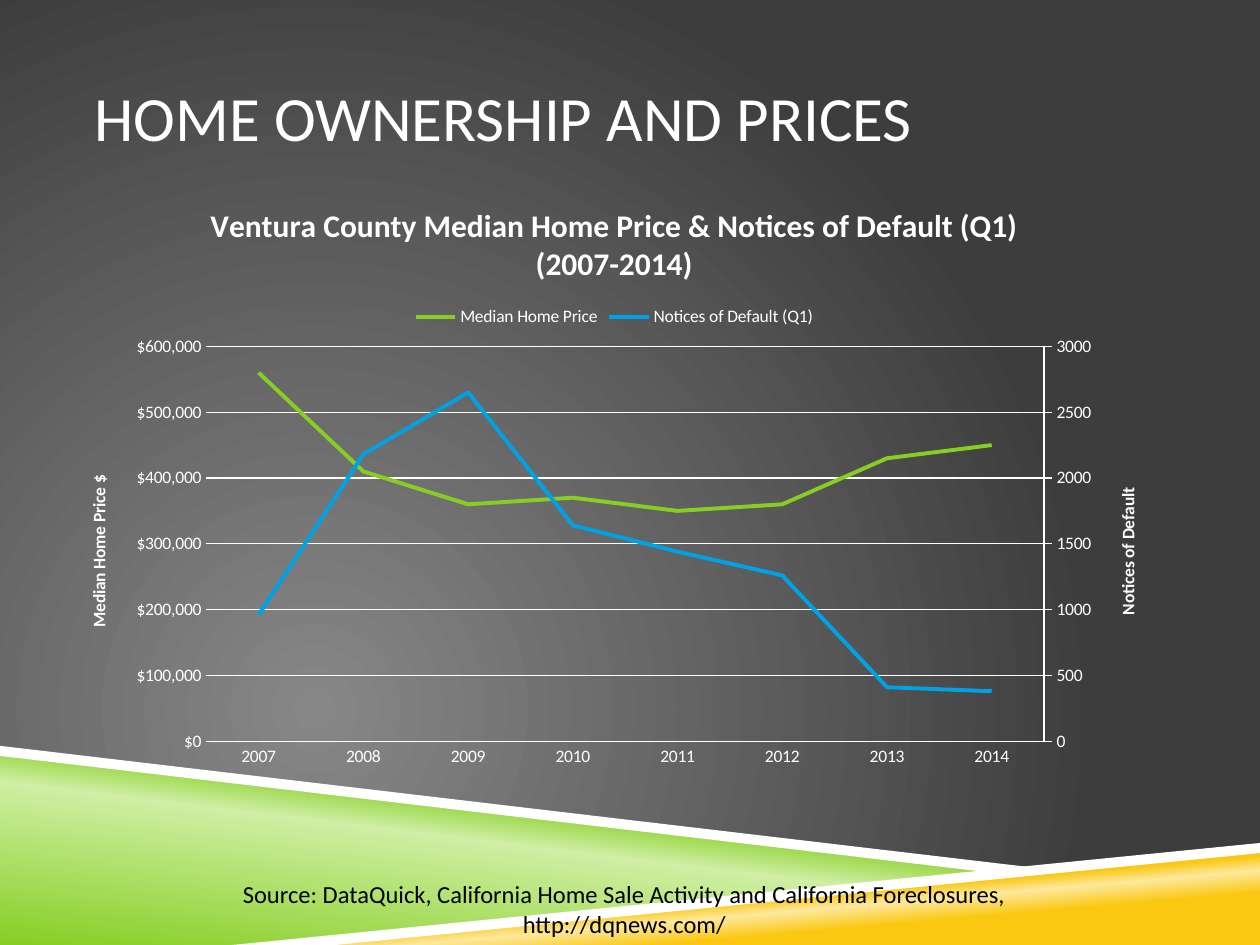
"""Build a slide on home prices and default notices in Ventura County."""
from copy import deepcopy

from pptx import Presentation
from pptx.chart.axis import CategoryAxis, ValueAxis
from pptx.chart.data import CategoryChartData
from pptx.dml.color import RGBColor
from pptx.enum.chart import XL_CHART_TYPE, XL_LEGEND_POSITION, XL_TICK_MARK
from pptx.enum.text import MSO_ANCHOR, PP_ALIGN
from pptx.oxml import parse_xml
from pptx.oxml.ns import nsdecls, qn
from pptx.util import Inches, Pt

LINE = XL_CHART_TYPE.LINE
TOP = XL_LEGEND_POSITION.TOP
OUT, NONE = XL_TICK_MARK.OUTSIDE, XL_TICK_MARK.NONE
LEFT, MID = PP_ALIGN.LEFT, PP_ALIGN.CENTER
THEME = {
    "font": "Calibri", "white": "FFFFFF", "black": "000000",
    "green": "86CE24", "pale": "CFEFA4", "gold": "FAC810", "cream": "FDE99F",
    "blue": "00A2E6", "gray": "878787", "dark": "3D3D3D",
    "head": 36, "name": 18, "note": 14, "small": 10,
}
HUE = {key: RGBColor.from_string(val) for key, val in THEME.items()
       if isinstance(val, str) and key != "font"}


def say(frame, text, size="small", hue="white", bold=False, align=MID):
    frame.text = text
    for para in frame.paragraphs:
        para.alignment = align
        for run in para.runs:
            font = run.font
            font.name, font.size, font.bold = THEME["font"], Pt(THEME[size]), bold
            font.color.rgb = HUE[hue]


def blend(node, stops, way):
    marks = "".join(f'<a:gs pos="{pos * 1000}"><a:srgbClr val="{THEME[hue]}"/></a:gs>'
                    for pos, hue in stops)
    old = next(node.iter(qn("a:solidFill")))
    old.getparent().replace(old, parse_xml(
        f'<a:gradFill {nsdecls("a")} rotWithShape="1"><a:gsLst>{marks}</a:gsLst>{way}</a:gradFill>'))


deck = Presentation()
deck.slide_width, deck.slide_height = Inches(10), Inches(7.5)
COL, ROW = deck.slide_width / 100, deck.slide_height / 100
slide = deck.slides.add_slide(deck.slide_layouts[6])
shapes = slide.shapes

slide.background.fill.solid()
slide.background.fill.fore_color.rgb = HUE["dark"]
blend(slide.element, [(0, "gray"), (100, "dark")],
      '<a:path path="circle"><a:fillToRect l="50000" t="100000" r="100000" b="50000"/></a:path>')

BANDS = [
    ([(0, 79.6), (79.2, 92.27), (20, 100), (0, 100)],
     [(0, "green"), (52, "pale"), (66, "green")], 277),
    ([(19.8, 100), (100, 89.6), (100, 100)],
     [(28, "gold"), (40, "cream"), (48, "gold")], 265),
    ([(0, 78.93), (0, 80), (79, 92.4), (83.2, 92)], None, 0),
    ([(100, 89.2), (18.4, 100), (26.6, 100), (100, 90.27)], None, 0),
]
for points, stops, turn in BANDS:
    spots = [(round(x * COL), round(y * ROW)) for x, y in points]
    pen = shapes.build_freeform(*spots[0])
    pen.add_line_segments(spots[1:], close=True)
    band = pen.convert_to_shape()
    band.shadow.inherit = False
    band.fill.solid()
    band.fill.fore_color.rgb = HUE["white"]
    band.line.fill.background()
    if stops:
        blend(band.element.spPr, stops, f'<a:lin ang="{turn * 60000}" scaled="0"/>')

BOXES = [
    ("HOME OWNERSHIP AND PRICES", (7.5, 4, 85, 16.67), 0, MSO_ANCHOR.MIDDLE,
     {"size": "head", "align": LEFT}),
    ("Source: DataQuick, California Home Sale Activity and California Foreclosures,\n"
     "http://dqnews.com/", (8.3, 92.4, 82.5, 7.6), 1, MSO_ANCHOR.TOP,
     {"size": "note", "hue": "black"}),
]
for text, (x, y, wide, high), pad, hold, style in BOXES:
    box = shapes.add_textbox(*map(round, (x * COL, y * ROW, wide * COL, high * ROW)))
    frame = box.text_frame
    frame.word_wrap, frame.vertical_anchor = True, hold
    frame.margin_left = frame.margin_right = round(pad * COL)
    say(frame, text, **style)

data = CategoryChartData()
data.categories = [str(year) for year in range(2007, 2015)]
data.add_series("Median Home Price",
                [560000, 410000, 360000, 370000, 350000, 360000, 430000, 450000])
data.add_series("Notices of Default (Q1)",
                [960, 2180, 2650, 1640, 1440, 1260, 410, 380])
chart = shapes.add_chart(LINE, *map(round, (5 * COL, 18.93 * ROW, 87.5 * COL, 63.33 * ROW)),
                         data).chart
chart.font.name, chart.font.size = THEME["font"], Pt(THEME["small"])
chart.font.color.rgb = HUE["white"]
chart.has_title = chart.has_legend = True
say(chart.chart_title.text_frame,
    "Ventura County Median Home Price & Notices of Default (Q1) (2007-2014)",
    size="name", bold=True)
chart.legend.position, chart.legend.include_in_layout = TOP, False

plot = chart.plots[0]
plot.vary_by_categories = False
for row, hue in zip(plot.series, ("green", "blue")):
    row.smooth = False
    row.format.line.width = Pt(2.25)
    row.format.line.color.rgb = HUE[hue]

area = chart.element.chart.plotArea
first = area.find(qn("c:lineChart"))
twin = deepcopy(first)
first.remove(first.findall(qn("c:ser"))[1])
twin.remove(twin.find(qn("c:ser")))
first.addnext(twin)

base, left = chart.category_axis, chart.value_axis
cat, val = area.find(qn("c:catAx")), area.find(qn("c:valAx"))
cat2, val2 = deepcopy(cat), deepcopy(val)
val.addnext(val2)
val2.addnext(cat2)
right = ValueAxis(val2)
CategoryAxis(cat2).visible = False
for node, key in zip(twin.findall(qn("c:axId")), ("50", "60")):
    node.set("val", key)
for node, own, mate in ((cat2, "50", "60"), (val2, "60", "50")):
    node.find(qn("c:axId")).set("val", own)
    node.find(qn("c:crossAx")).set("val", mate)
val2.find(qn("c:axPos")).set("val", "r")
val2.find(qn("c:crosses")).set("val", "max")

base.major_tick_mark = NONE
base.format.line.color.rgb = HUE["white"]
SIDES = [
    (left, "Median Home Price $", 600000, '"$"#,##0', NONE),
    (right, "Notices of Default", 3000, "General", OUT),
]
for axis, text, peak, form, tick in SIDES:
    axis.minimum_scale, axis.maximum_scale, axis.major_unit = 0, peak, peak / 6
    axis.major_tick_mark, axis.minor_tick_mark = tick, NONE
    axis.tick_labels.number_format = form
    axis.tick_labels.number_format_is_linked = False
    frame = axis.axis_title.text_frame
    say(frame, text, bold=True)
    body = next(axis.axis_title._element.iter(qn("a:bodyPr")))
    body.set("rot", "-5400000")
    body.set("vert", "horz")
right.has_major_gridlines = False
right.format.line.color.rgb = HUE["white"]
left.format.line.fill.background()
left.has_major_gridlines = True
left.major_gridlines.format.line.color.rgb = HUE["white"]
left.major_gridlines.format.line.width = Pt(0.75)

for node in area.findall(qn("c:layout")):
    area.remove(node)
sides = "".join(f'<c:{key} val="{share}"/>' for key, share in
                (("layoutTarget", "inner"), ("xMode", "edge"), ("yMode", "edge"),
                 ("x", 0.13), ("y", 0.28), ("w", 0.76), ("h", 0.66)))
area.insert(0, parse_xml(
    f'<c:layout {nsdecls("c")}><c:manualLayout>{sides}</c:manualLayout></c:layout>'))

deck.save("out.pptx")
